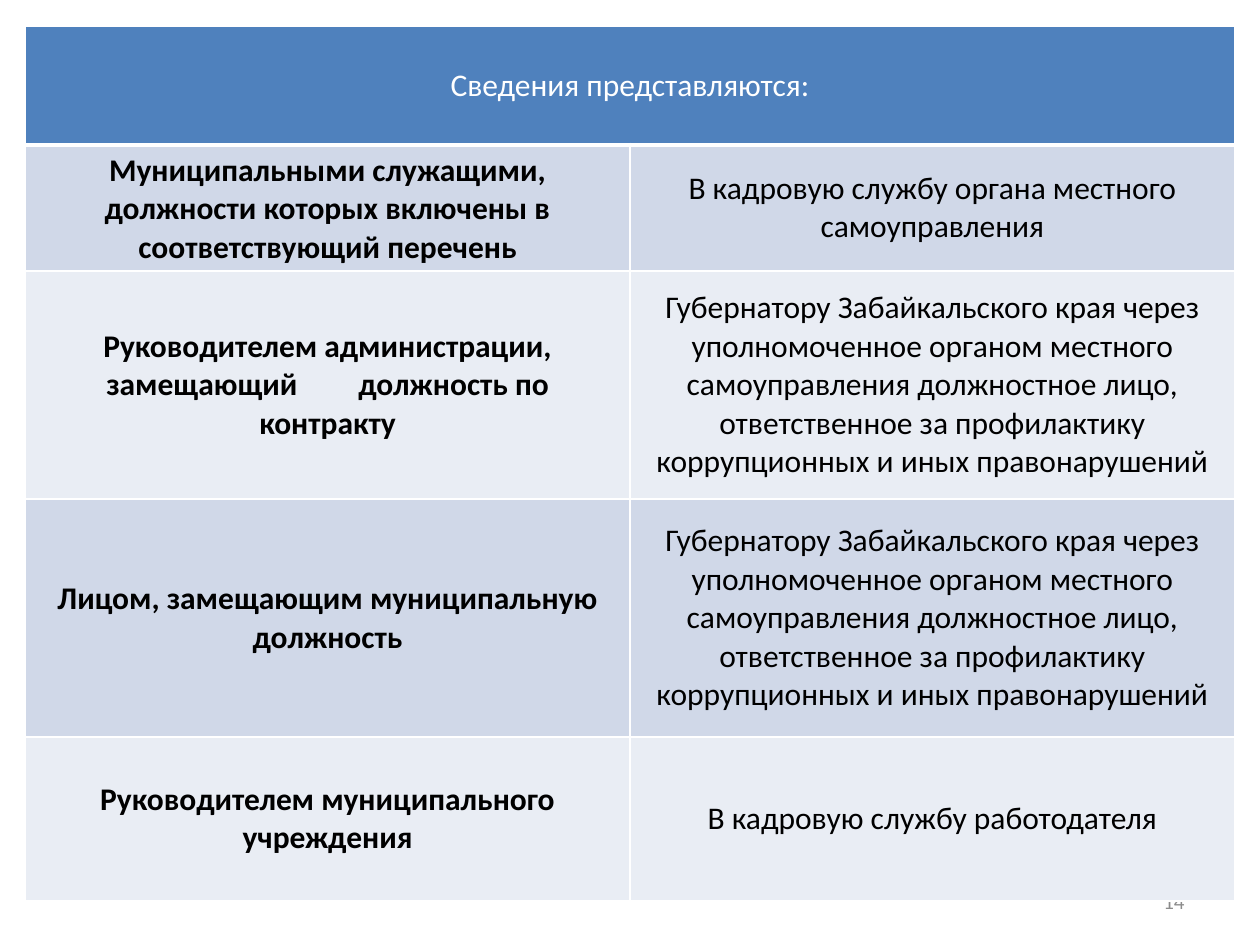
from lxml import etree
from pptx import Presentation
from pptx.dml.color import RGBColor
from pptx.enum.text import MSO_ANCHOR, PP_ALIGN
from pptx.oxml.ns import qn
from pptx.util import Inches, Pt

HEADER_FILL = "4F81BD"
BAND_FILLS = ("D0D8E8", "E9EDF4")
WHITE = "FFFFFF"
ROW_HEIGHTS = (0.94, 1.0, 1.81, 1.89, 1.3)

HEADING = "Сведения представляются:"
GOVERNOR = (
    "Губернатору Забайкальского края через уполномоченное органом местного "
    "самоуправления должностное лицо, ответственное за профилактику "
    "коррупционных и иных правонарушений"
)
# Who submits the information, and to whom
SUBMISSIONS = (
    ("Муниципальными служащими, должности которых включены в соответствующий перечень",
     "В кадровую службу органа местного самоуправления"),
    ("Руководителем администрации, замещающий \tдолжность по контракту", GOVERNOR),
    ("Лицом, замещающим муниципальную должность", GOVERNOR),
    ("Руководителем муниципального учреждения", "В кадровую службу работодателя"),
)


def rgb(value):
    return RGBColor.from_string(value)


def write(frame, text, size=18, color="000000", bold=False, align=PP_ALIGN.CENTER):
    paragraph = frame.paragraphs[0]
    paragraph.alignment = align
    run = paragraph.add_run()
    run.text = text
    run.font.name = "Calibri"
    run.font.size = Pt(size)
    run.font.bold = bold
    run.font.color.rgb = rgb(color)


def style_cell(cell, fill, bottom=1):
    """Set white borders, fill and vertical centring."""
    properties = cell._tc.get_or_add_tcPr()
    for side, width in (("L", 1), ("R", 1), ("T", 1), ("B", bottom)):
        line = etree.SubElement(properties, qn(f"a:ln{side}"), w=str(Pt(width)))
        solid = etree.SubElement(line, qn("a:solidFill"))
        etree.SubElement(solid, qn("a:srgbClr"), val=WHITE)
    cell.fill.solid()
    cell.fill.fore_color.rgb = rgb(fill)
    cell.vertical_anchor = MSO_ANCHOR.MIDDLE


def add_page_number(slide, left, top, width, height):
    frame = slide.shapes.add_textbox(
        Inches(left), Inches(top), Inches(width), Inches(height)).text_frame
    frame.word_wrap = True
    frame.vertical_anchor = MSO_ANCHOR.MIDDLE
    write(frame, "14", size=12, color="8C8C8C", align=PP_ALIGN.RIGHT)


def add_submissions_table(slide, left, top, width):
    table = slide.shapes.add_table(
        len(ROW_HEIGHTS), 2, Inches(left), Inches(top),
        Inches(width), Inches(sum(ROW_HEIGHTS))).table
    for row, height in zip(table.rows, ROW_HEIGHTS):
        row.height = Inches(height)

    # Heading across both columns
    for cell in table.rows[0].cells:
        style_cell(cell, HEADER_FILL, bottom=3)
    heading = table.cell(0, 0)
    heading.merge(table.cell(0, 1))
    write(heading.text_frame, HEADING, color=WHITE)

    # Banded rows, submitter in bold
    for row, texts in enumerate(SUBMISSIONS, start=1):
        for column, text in enumerate(texts):
            cell = table.cell(row, column)
            style_cell(cell, BAND_FILLS[(row - 1) % 2])
            write(cell.text_frame, text, bold=column == 0)


def main():
    presentation = Presentation()
    presentation.slide_width = Inches(10)
    presentation.slide_height = Inches(7.5)
    slide = presentation.slides.add_slide(presentation.slide_layouts[6])
    add_page_number(slide, 7.17, 6.95, 2.33, 0.4)
    add_submissions_table(slide, 0.2, 0.21, 9.6)
    presentation.save("out.pptx")


if __name__ == "__main__":
    main()
